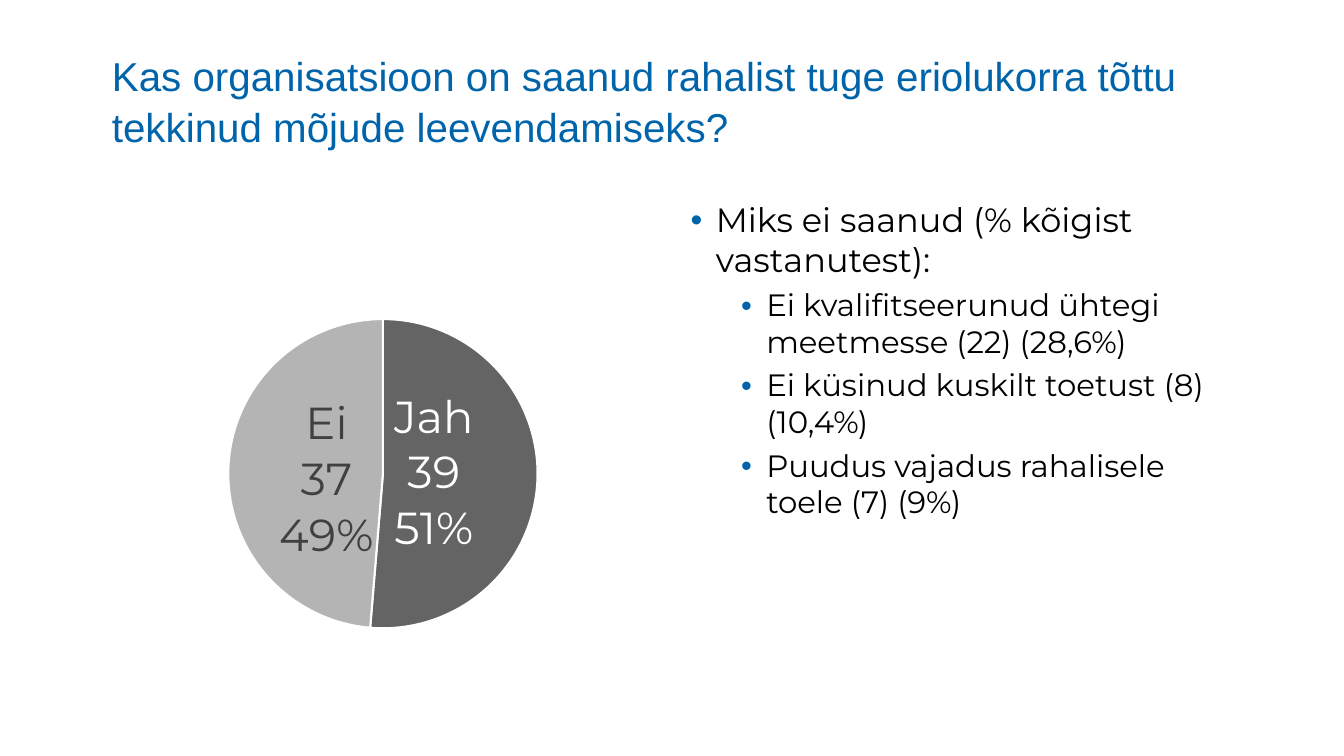
from dataclasses import dataclass

from lxml import etree
from pptx import Presentation
from pptx import util as u
from pptx.chart.data import CategoryChartData
from pptx.dml.color import RGBColor
from pptx.enum import chart as charts, text
from pptx.oxml import ns


@dataclass(frozen=True)
class Theme:
    title_font: str = "Arial"
    body_font: str = "Montserrat"
    accent: str = "0064AA"
    ink: str = "000000"
    paper: str = "FFFFFF"
    label: str = "404040"
    slices: tuple = ("646464", "B4B4B4")
    title_size: float = 28.8
    level_sizes: tuple = (24, 22)
    label_size: int = 32
    chart_size: int = 10


def add_xml(parent, tag, **attributes):
    return etree.SubElement(parent, ns.qn(tag), attributes)


class SlideBuilder:
    def __init__(self, presentation, theme):
        self.theme = theme
        self.slide = presentation.slides.add_slide(presentation.slide_layouts[1])

    def style(self, font, name, size, color):
        font.name = name
        font.size = u.Pt(size)
        font.color.rgb = RGBColor.from_string(color)

    def place(self, shape, left, top, width, height, anchor):
        shape.left, shape.top = u.Inches(left), u.Inches(top)
        shape.width, shape.height = u.Inches(width), u.Inches(height)
        frame = shape.text_frame
        frame.word_wrap = True
        frame.auto_size = text.MSO_AUTO_SIZE.NONE
        frame.vertical_anchor = anchor
        return frame

    def title(self, wording, *box):
        frame = self.place(self.slide.shapes.title, *box, text.MSO_ANCHOR.MIDDLE)
        paragraph = frame.paragraphs[0]
        paragraph.text = wording
        paragraph.alignment = text.PP_ALIGN.LEFT
        paragraph.line_spacing = 1.05
        self.style(paragraph.font, self.theme.title_font,
                   self.theme.title_size, self.theme.accent)

    def bullets(self, items, *box):
        frame = self.place(self.slide.placeholders[1], *box, text.MSO_ANCHOR.TOP)
        for index, (level, wording) in enumerate(items):
            paragraph = frame.add_paragraph() if index else frame.paragraphs[0]
            paragraph.text = wording
            paragraph.level = level
            properties = paragraph._p.get_or_add_pPr()
            properties.set("marL", str(u.Inches(0.25 + 0.5 * level)))
            properties.set("indent", str(u.Inches(-0.25)))
            add_xml(add_xml(properties, "a:buClr"), "a:srgbClr", val=self.theme.accent)
            add_xml(properties, "a:buFont", typeface="Arial")
            add_xml(properties, "a:buChar", char="•")
            paragraph.alignment = text.PP_ALIGN.LEFT
            paragraph.space_before = u.Pt(5 if index else 0)
            paragraph.line_spacing = 0.99
            self.style(paragraph.font, self.theme.body_font,
                       self.theme.level_sizes[level], self.theme.ink)

    def pie(self, answers, label_colors, label_shifts, plot_area, *box):
        theme = self.theme
        data = CategoryChartData()
        data.categories = list(answers)
        data.add_series("Series 1", list(answers.values()))
        chart = self.slide.shapes.add_chart(
            charts.XL_CHART_TYPE.PIE, *map(u.Inches, box), data).chart
        chart.has_legend = chart.has_title = False
        self.style(chart.font, theme.body_font, theme.chart_size, theme.ink)
        plot = chart.plots[0]
        plot.vary_by_categories = True
        series = plot.series[0]

        # Labels shared by the series
        labels = series.data_labels
        labels.show_value = labels.show_percentage = labels.show_category_name = True
        labels.position = charts.XL_LABEL_POSITION.CENTER
        self.style(labels.font, theme.body_font, theme.label_size, theme.label)

        # Slices and their own labels
        for index, color in enumerate(theme.slices):
            point = series.points[index]
            point.format.fill.solid()
            point.format.fill.fore_color.rgb = RGBColor.from_string(color)
            point.format.line.color.rgb = RGBColor.from_string(theme.paper)
            point.format.line.width = u.Pt(1.5)
            label = point.data_label
            self.style(label.font, theme.body_font, theme.label_size, label_colors[index])
            label.position = charts.XL_LABEL_POSITION.CENTER

        group = labels._element
        for element, shift in zip(group.findall(ns.qn("c:dLbl")), label_shifts):
            layout = etree.Element(ns.qn("c:layout"))
            manual = add_xml(layout, "c:manualLayout")
            for tag, value in zip("xy", shift):
                add_xml(manual, f"c:{tag}", val=str(value))
            element.insert(1, layout)
            for tag in ("c:showVal", "c:showCatName", "c:showPercent"):
                element.find(ns.qn(tag)).set("val", "1")
        for element in [group, *group.findall(ns.qn("c:dLbl"))]:
            separator = etree.Element(ns.qn("c:separator"))
            separator.text = "\n"
            last_flag = [child for child in element
                         if etree.QName(child).localname in ("showPercent", "showBubbleSize")][-1]
            last_flag.addnext(separator)
        for leader in group.findall(ns.qn("c:showLeaderLines")):
            leader.set("val", "0")

        # Size of the pie inside the chart
        area = chart._chartSpace.chart.plotArea
        for old in area.findall(ns.qn("c:layout")):
            area.remove(old)
        layout = etree.Element(ns.qn("c:layout"))
        manual = add_xml(layout, "c:manualLayout")
        add_xml(manual, "c:layoutTarget", val="inner")
        for tag in ("xMode", "yMode"):
            add_xml(manual, f"c:{tag}", val="edge")
        for tag, value in zip("xywh", plot_area):
            add_xml(manual, f"c:{tag}", val=str(value))
        area.insert(0, layout)


def main():
    presentation = Presentation()
    presentation.slide_width = u.Inches(13.33)
    presentation.slide_height = u.Inches(7.5)
    theme = Theme()
    builder = SlideBuilder(presentation, theme)

    # Question
    builder.title("Kas organisatsioon on saanud rahalist tuge eriolukorra tõttu "
                  "tekkinud mõjude leevendamiseks?", 1.01, 0.47, 11.5, 1.04)

    # Answers
    builder.pie({"Jah": 39, "Ei": 37}, (theme.paper, theme.label),
                ((-0.05, -0.01), (0.04, 0.02)), (0.22, 0.15, 0.59, 0.7),
                1.12, 2.5, 5.2, 4.4)

    # Reasons
    builder.bullets([
        (0, "Miks ei saanud (% kõigist vastanutest):"),
        (1, "Ei kvalifitseerunud ühtegi meetmesse (22) (28,6%)"),
        (1, "Ei küsinud kuskilt toetust (8) (10,4%)"),
        (1, "Puudus vajadus rahalisele toele (7) (9%)"),
    ], 6.75, 1.94, 5.67, 4.85)

    presentation.save("out.pptx")


if __name__ == "__main__":
    main()
